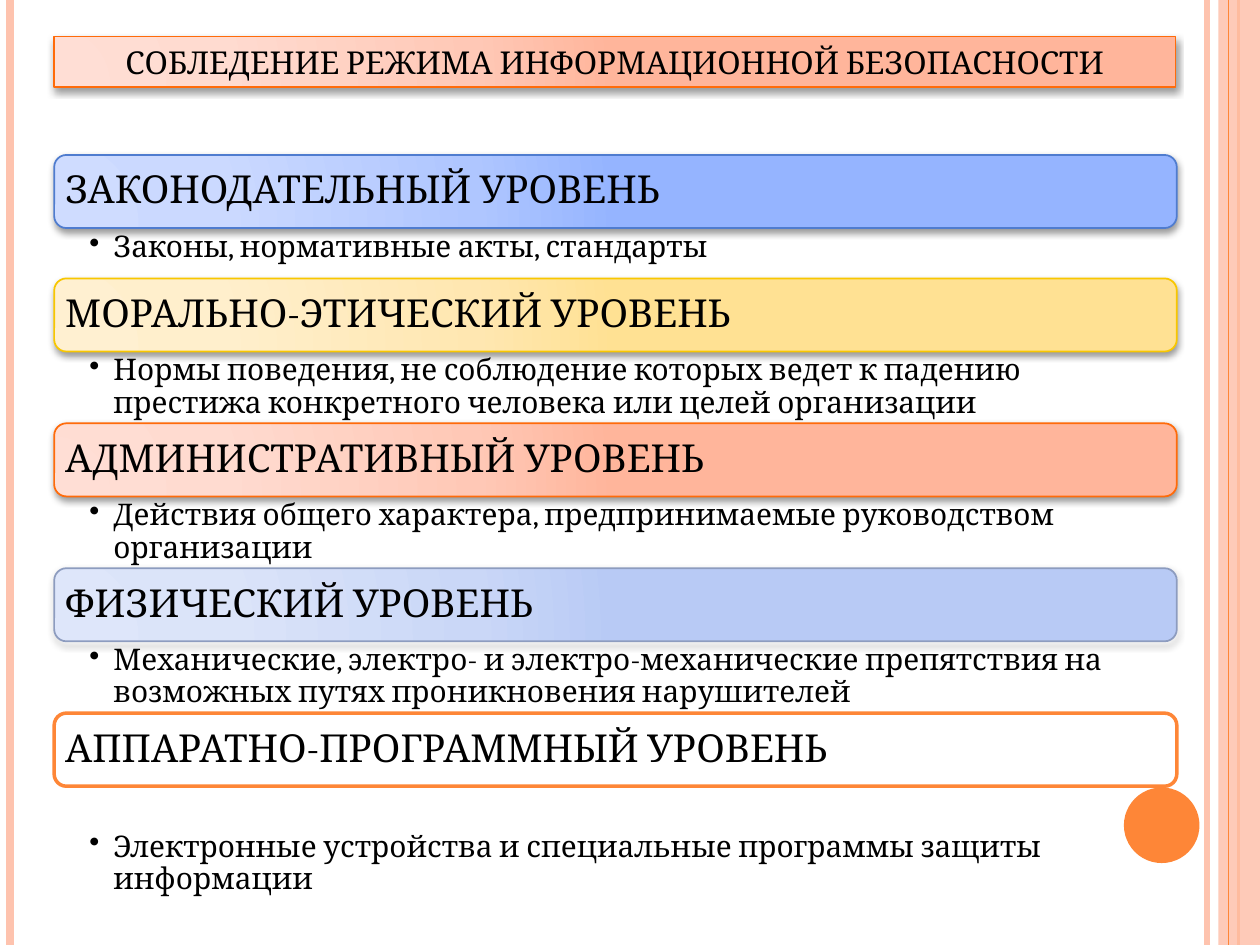
"""Build the slide on the levels of an information security regime."""
import pptx
import pptx.dml.color
import pptx.enum.shapes
import pptx.enum.text
import pptx.oxml
import pptx.util

Inches, Pt = pptx.util.Inches, pptx.util.Pt
RGB = pptx.dml.color.RGBColor.from_string
SHAPE = pptx.enum.shapes.MSO_SHAPE
ALIGN = pptx.enum.text.PP_ALIGN
ANCHOR = pptx.enum.text.MSO_ANCHOR
NS = 'xmlns:a="http://schemas.openxmlformats.org/drawingml/2006/main"'

THEME = {
    "font": "Cambria", "text": "000000", "accent": "FE8637", "pale": "FEC3AE",
    "white": "FFFFFF", "title_size": 18, "level_size": 22, "detail_size": 17,
    "blue": (("FFDED5", "FFDBD0", "FFC8B6", "FFB59B"), "FF6B0A"),
}
THEME.update({
    "orange": THEME["blue"],
    "blue": (("CFDCFF", "CBD9FF", "AFC6FF", "95B4FF"), "4F7CCF"),
    "yellow": (("FFF0D1", "FFEFCC", "FFE7B1", "FFE193"), "F8C700"),
    "steel": (("DEE6FA", "DBE4F9", "CAD7F7", "B8CAF5"), "8D9CBF"),
    "plain": (None, THEME["accent"]),
})

TITLE = "СОБЛЕДЕНИЕ РЕЖИМА ИНФОРМАЦИОННОЙ БЕЗОПАСНОСТИ"
LEVELS = [
    ("ЗАКОНОДАТЕЛЬНЫЙ УРОВЕНЬ", "blue", "Законы, нормативные акты, стандарты", 0.4, 0.03),
    ("МОРАЛЬНО-ЭТИЧЕСКИЙ УРОВЕНЬ", "yellow",
     "Нормы поведения, не соблюдение которых ведет к падению престижа "
     "конкретного человека или целей организации", 0.57, 0.03),
    ("АДМИНИСТРАТИВНЫЙ УРОВЕНЬ", "orange",
     "Действия общего характера, предпринимаемые руководством организации", 0.57, 0.03),
    ("ФИЗИЧЕСКИЙ УРОВЕНЬ", "steel",
     "Механические, электро- и электро-механические препятствия на "
     "возможных путях проникновения нарушителей", 0.57, 0.03),
    ("АППАРАТНО-ПРОГРАММНЫЙ УРОВЕНЬ", "plain",
     "Электронные устройства и специальные программы защиты информации", 0.9, 0.36),
]
STRIPES = [(9.58, "pale", 3), (0.08, "pale", 4.5), (9.83, "accent", 1.5)]
INNER_STRIPE = (9.75, "accent", 0.75)
LEFT, WIDTH, TOP, BAR_HEIGHT = 0.43, 8.91, 1.23, 0.58


def xml(markup):
    return pptx.oxml.parse_xml(markup)


def add_stripe(slide, x, color, weight):
    stripe = slide.shapes.add_connector(
        pptx.enum.shapes.MSO_CONNECTOR.STRAIGHT, Inches(x), 0, Inches(x), Inches(7.5))
    stripe.line.color.rgb = RGB(THEME[color])
    stripe.line.width = Pt(weight)
    stripe._element.spPr.append(xml(f"<a:effectLst {NS}/>"))


def add_solid(slide, kind, box, color):
    solid = slide.shapes.add_shape(kind, *map(Inches, box))
    solid.shadow.inherit = False
    solid.fill.solid()
    solid.fill.fore_color.rgb = RGB(color)
    solid.line.fill.background()
    return solid


def add_bar(slide, kind, box, palette):
    tints, edge = THEME[palette]
    bar = add_solid(slide, kind, box, THEME["white"])
    bar.line.color.rgb = RGB(edge)
    bar.line.width = Pt(1 if tints else 2)
    if tints:
        stops = "".join(
            f'<a:gs pos="{pos}000"><a:srgbClr val="{tint}"/></a:gs>'
            for pos, tint in zip((0, 30, 75, 100), tints))
        props = bar._element.spPr
        props.replace(props.find("{*}solidFill"), xml(
            f'<a:gradFill {NS} rotWithShape="1"><a:gsLst>{stops}</a:gsLst>'
            '<a:path path="circle"><a:fillToRect l="5000" t="100000" r="120000" '
            'b="10000"/></a:path></a:gradFill>'))
        props.find("{*}effectLst").append(xml(
            f'<a:outerShdw {NS} blurRad="{Pt(4)}" dist="{Pt(2)}" dir="5400000" '
            'rotWithShape="0"><a:srgbClr val="000000"><a:alpha val="40000"/>'
            '</a:srgbClr></a:outerShdw>'))
    return bar


def write(holder, text, size, insets, anchor, align=ALIGN.LEFT, spacing=0.9):
    frame = holder.text_frame
    frame.text = text
    frame.word_wrap = True
    frame.vertical_anchor = anchor
    (frame.margin_left, frame.margin_top,
     frame.margin_right, frame.margin_bottom) = map(Inches, insets)
    paragraph = frame.paragraphs[0]
    paragraph.alignment = align
    paragraph.line_spacing = spacing
    font = paragraph.runs[0].font
    font.name = THEME["font"]
    font.size = Pt(THEME[size])
    font.color.rgb = RGB(THEME["text"])
    return paragraph


def add_detail(slide, text, box, top_inset):
    detail = slide.shapes.add_textbox(*map(Inches, box))
    paragraph = write(detail, text, "detail_size", (0.28, top_inset, 0.17, 0.03), ANCHOR.TOP)
    props = paragraph._p.get_or_add_pPr()
    props.set("marL", str(Inches(0.19)))
    props.set("indent", str(-Inches(0.19)))
    props.append(xml(f'<a:buChar {NS} char="•"/>'))


def main():
    deck = pptx.Presentation()
    deck.slide_width, deck.slide_height = Inches(10), Inches(7.5)
    slide = deck.slides.add_slide(deck.slide_layouts[6])

    for stripe in STRIPES:
        add_stripe(slide, *stripe)
    band = add_solid(slide, SHAPE.RECTANGLE, (9.67, 0, 0.33, 7.5), THEME["pale"])
    band._element.spPr.find("{*}solidFill")[0].append(xml(f'<a:alpha {NS} val="87000"/>'))
    add_stripe(slide, *INNER_STRIPE)
    add_solid(slide, SHAPE.OVAL, (8.92, 6.25, 0.6, 0.6), THEME["accent"])

    heading = add_bar(slide, SHAPE.RECTANGLE, (LEFT, 0.29, 8.9, 0.4), "orange")
    write(heading, TITLE, "title_size", (0.1, 0.05, 0.1, 0.05), ANCHOR.MIDDLE, ALIGN.CENTER, 1.0)

    top = TOP
    for level, palette, detail, detail_height, top_inset in LEVELS:
        bar = add_bar(slide, SHAPE.ROUNDED_RECTANGLE, (LEFT, top, WIDTH, BAR_HEIGHT), palette)
        write(bar, level, "level_size", (0.06, 0.06, 0.06, 0.06), ANCHOR.MIDDLE)
        top += BAR_HEIGHT
        add_detail(slide, detail, (LEFT, top, WIDTH, detail_height), top_inset)
        top += detail_height

    deck.save("out.pptx")


if __name__ == "__main__":
    main()
